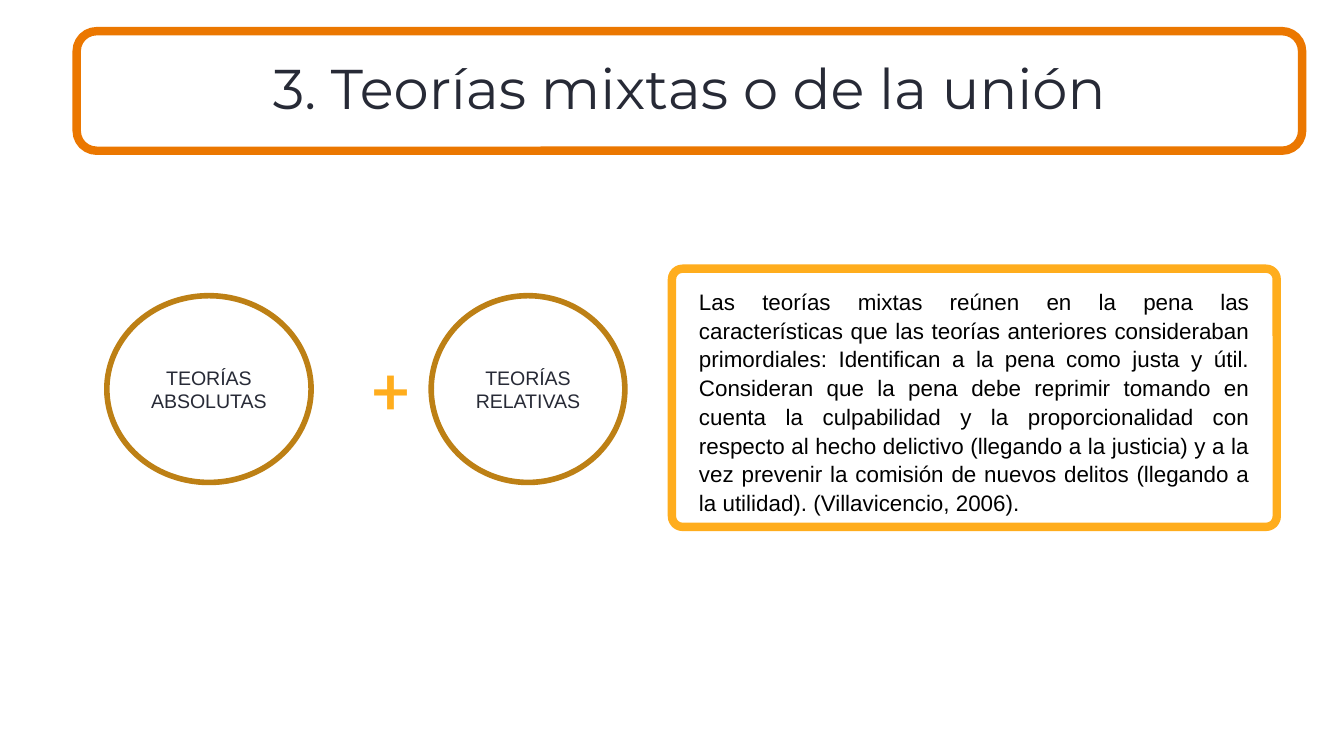
from pptx import Presentation
from pptx.dml.color import RGBColor
from pptx.enum.shapes import MSO_SHAPE
from pptx.enum.text import MSO_ANCHOR, MSO_AUTO_SIZE, PP_ALIGN
from pptx.oxml.ns import qn
from pptx.util import Cm, Pt
from lxml.etree import SubElement

HUES = {"ink": "272A36", "black": "000000", "dark": "EB7700",
        "light": "FFAD1D", "gold": "BD8015"}


class Deck:
    """Keeps the style and the current slide."""

    def __init__(self, wide, high):
        self.file = Presentation()
        self.file.slide_width, self.file.slide_height = Cm(wide), Cm(high)
        self.slide = self.file.slides.add_slide(self.file.slide_layouts[1])

    def hue(self, name):
        return RGBColor.from_string(HUES[name])

    def place(self, item, box):
        item.left, item.top, item.width, item.height = map(Cm, box)

    def label(self, item, text, size, font="Arial", hue="ink", bold=False,
              align=PP_ALIGN.CENTER, anchor=MSO_ANCHOR.MIDDLE, lead=1.0):
        frame = item.text_frame
        frame.text = text
        frame.word_wrap = True
        frame.auto_size = MSO_AUTO_SIZE.NONE
        frame.vertical_anchor = anchor
        par = frame.paragraphs[0]
        par.alignment, par.line_spacing = align, lead
        par.space_before = Pt(0)
        run = par.runs[0].font
        run.name, run.size, run.bold = font, Pt(size), bold
        run.color.rgb = self.hue(hue)

    def inset(self, item):
        frame = item.text_frame
        frame.margin_left = frame.margin_right = Cm(0.18)
        frame.margin_top = frame.margin_bottom = Cm(0.1)

    def shape(self, kind, box, hue, width):
        item = self.slide.shapes.add_shape(kind, *map(Cm, box))
        item.shadow.inherit = False
        item.fill.background()
        item.line.color.rgb = self.hue(hue)
        item.line.width = Pt(width)
        return item

    def frame(self, box, hue, curve):
        item = self.shape(MSO_SHAPE.ROUNDED_RECTANGLE, box, hue, 4.5)
        item.adjustments[0] = curve

    def circle(self, box, text):
        item = self.shape(MSO_SHAPE.OVAL, box, "gold", 3)
        self.label(item, text, 10.5)

    def title(self, box, text):
        item = self.slide.shapes.title
        self.place(item, box)
        self.inset(item)
        self.label(item, text, 30, "Montserrat", lead=0.9)

    def body(self, box, text):
        item = self.slide.placeholders[1]
        self.place(item, box)
        self.inset(item)
        self.label(item, text, 12, hue="black", align=PP_ALIGN.JUSTIFY,
                   anchor=MSO_ANCHOR.TOP, lead=1.07)
        props = item.text_frame.paragraphs[0]._p.get_or_add_pPr()
        props.set("marL", "0")
        props.set("indent", "0")
        SubElement(props, qn("a:buNone"))

    def sign(self, box, text):
        item = self.slide.shapes.add_textbox(*map(Cm, box))
        self.label(item, text, 36, "Lato", "light", bold=True)


def main():
    deck = Deck(25.4, 14.29)

    # Title in its frame
    head = (1.45, 0.59, 23.16, 2.26)
    deck.frame(head, "dark", 0.167)
    deck.title(head, "3. Teorías mixtas o de la unión")

    # The two theories joined by a plus
    top, high = 5.59, 3.53
    deck.circle((2.02, top, 3.86, high), "TEORÍAS ABSOLUTAS")
    deck.sign((6.64, top, 1.5, high), "+")
    deck.circle((8.15, top, 3.66, high), "TEORÍAS RELATIVAS")

    # Explanation in its frame
    deck.frame((12.7, 5.08, 11.43, 4.88), "light", 0.041)
    deck.body((13.03, 5.31, 10.77, 4.6),
              "Las teorías mixtas reúnen en la pena las características que "
              "las teorías anteriores consideraban primordiales: Identifican "
              "a la pena como justa y útil. Consideran que la pena debe "
              "reprimir tomando en cuenta la culpabilidad y la "
              "proporcionalidad con respecto al hecho delictivo (llegando a "
              "la justicia) y a la vez prevenir la comisión de nuevos "
              "delitos (llegando a la utilidad). (Villavicencio, 2006).")

    deck.file.save("out.pptx")


if __name__ == "__main__":
    main()
